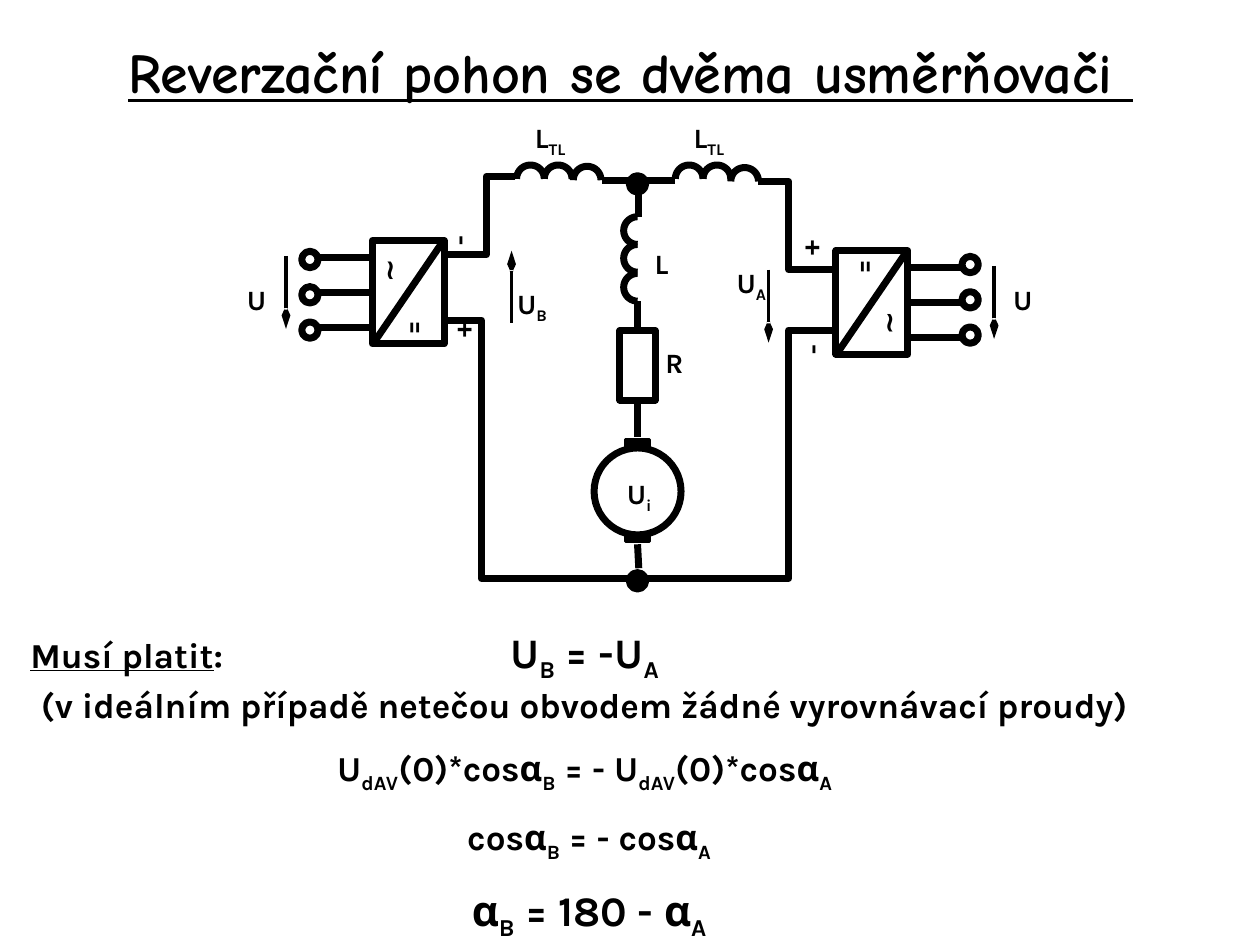
"""Build a slide on a reversing drive fed by two rectifiers."""
from dataclasses import dataclass
from math import cos, pi, sin

from lxml.etree import SubElement
from pptx import Presentation
from pptx.dml.color import RGBColor
from pptx.enum.shapes import MSO_CONNECTOR as Connector, MSO_SHAPE as Shape
from pptx.enum.text import MSO_ANCHOR as Anchor, MSO_AUTO_SIZE as AutoSize, PP_ALIGN as Align
from pptx.oxml.ns import qn
from pptx.util import Inches, Pt


@dataclass(frozen=True)
class Theme:
    ink: RGBColor = RGBColor(0, 0, 0)
    title_font: str = "Comic Neue"
    body_font: str = "Karla"
    title: int = 32
    large: int = 24
    body: int = 20
    label: int = 16
    wire: int = 4
    thin: int = 2
    inset: float = 0.04
    label_height: float = 0.35


THEME = Theme()


def write(para, text, size=THEME.body, font=THEME.body_font, underline=False):
    for index, part in enumerate(text.split("_")):
        if not part:
            continue
        span = para.add_run()
        span.text = part
        span.font.name, span.font.size = font, Pt(size)
        span.font.bold, span.font.underline = True, underline
        span.font.color.rgb = THEME.ink
        if index % 2:
            span._r.get_or_add_rPr().set("baseline", "-25000")


class Canvas:
    def __init__(self, page, theme):
        self.page, self.theme = page, theme

    def title(self, text, left, top, width, height):
        box = self.page.shapes.title
        box.left, box.top = Inches(left), Inches(top)
        box.width, box.height = Inches(width), Inches(height)
        box.text_frame.vertical_anchor = Anchor.MIDDLE
        para = box.text_frame.paragraphs[0]
        para.alignment = Align.CENTER
        write(para, text, size=self.theme.title, font=self.theme.title_font, underline=True)

    def text_box(self, left, top, width, height, wrap=False):
        box = self.page.shapes.add_textbox(*map(Inches, (left, top, width, height)))
        frame = box.text_frame
        frame.word_wrap, frame.auto_size = wrap, AutoSize.SHAPE_TO_FIT_TEXT
        frame.margin_left = frame.margin_right = Inches(self.theme.inset)
        frame.margin_top = frame.margin_bottom = Inches(self.theme.inset)
        return box

    def label(self, text, x, y, width=0.24, rotation=0, align=Align.LEFT):
        height = self.theme.label_height
        box = self.text_box(x - width / 2, y - height / 2, width, height)
        box.rotation = rotation
        para = box.text_frame.paragraphs[0]
        para.alignment = align
        write(para, text, size=self.theme.label)

    def outline(self, shape, weight, filled=False):
        shape.shadow.inherit = False
        shape.line.color.rgb, shape.line.width = self.theme.ink, Pt(weight)
        if filled:
            shape.fill.solid()
            shape.fill.fore_color.rgb = self.theme.ink
        else:
            shape.fill.background()

    def shape(self, kind, x, y, width, height, weight=THEME.wire, filled=False):
        shape = self.page.shapes.add_shape(
            kind, *map(Inches, (x - width / 2, y - height / 2, width, height)))
        self.outline(shape, weight, filled)

    def node(self, x, y, filled=False):
        self.shape(Shape.OVAL, x, y, 0.13, 0.13, filled=filled)

    def line(self, start, end, weight=THEME.wire, arrow=False):
        line = self.page.shapes.add_connector(
            Connector.STRAIGHT, *map(Inches, (*start, *end)))
        line.line.color.rgb, line.line.width = self.theme.ink, Pt(weight)
        properties = line._element.spPr
        if arrow:
            SubElement(properties.find(qn("a:ln")), qn("a:tailEnd"),
                       type="arrow", w="sm", len="lg")
        SubElement(properties, qn("a:effectLst"))

    def arrow(self, x, start, end):
        self.line((x, start), (x, end), self.theme.thin, arrow=True)

    def wire(self, points):
        spots = [(Inches(x), Inches(y)) for x, y in points]
        builder = self.page.shapes.build_freeform(*spots[0])
        builder.add_line_segments(spots[1:], close=False)
        self.outline(builder.convert_to_shape(), self.theme.wire)

    def turn(self, x, y, start_angle, radius=0.11, steps=24):
        angles = [start_angle + pi * step / steps for step in range(steps + 1)]
        self.wire([(x + radius * cos(a), y + radius * sin(a)) for a in angles])

    def converter(self, x, y, side):
        rotation = 90 if side > 0 else 270
        self.shape(Shape.RECTANGLE, x, y, 0.57, 0.82)
        self.line((x + 0.28, y - 0.41), (x - 0.28, y + 0.41))
        for offset in (-0.28, 0, 0.28):
            self.line((x + side * 0.28, y + offset), (x + side * 0.72, y + offset))
            self.node(x + side * 0.78, y + offset - side * 0.02)
        for sign, dx, dy in (("∼", 0.16, 0.16), ("=", -0.02, -0.28)):
            self.label(sign, x + side * dx, y + side * dy, 0.25, rotation, Align.CENTER)
        self.arrow(x + side * 0.97, y - 0.29, y + 0.29)
        self.label("U", x + side * 1.2, 2.38)

    def statement(self, rows, left, top, width, height, tab, gap):
        frame = self.text_box(left, top, width, height, wrap=True).text_frame
        for index, (spaced, spans) in enumerate(rows):
            para = frame.add_paragraph() if index else frame.paragraphs[0]
            if spaced:
                para.space_before = Pt(gap)
            stops = SubElement(para._p.get_or_add_pPr(), qn("a:tabLst"))
            SubElement(stops, qn("a:tab"), pos=str(Inches(tab)), algn="ctr")
            for text, style in spans:
                write(para, text, **style)


def draw_circuit(canvas):
    middle = 5.06
    canvas.converter(6.92, 2.4, 1)
    canvas.converter(3.24, 2.32, -1)

    for x, y in ((4.21, 1.42), (4.43, 1.42), (4.66, 1.43),
                 (5.47, 1.42), (5.69, 1.42), (5.91, 1.44)):
        canvas.turn(x, y, pi)
    for y in (1.83, 2.05, 2.28):
        canvas.turn(middle, y, pi / 2)

    for start, end in (((4.78, 1.43), (5, 1.43)), ((5.13, 1.43), (5.36, 1.43)),
                       ((5.07, 1.49), (5.07, 1.72)), ((middle, 2.39), (middle, 2.61)),
                       ((middle, 3.19), (middle, 3.47)), ((middle, 4.32), (5.07, 4.51))):
        canvas.line(start, end)
    for points in (((6.02, 1.44), (6.26, 1.44), (6.26, 2.14), (6.65, 2.14)),
                   ((6.65, 2.62), (6.26, 2.62), (6.26, 4.59), (5.08, 4.59)),
                   ((4.09, 1.4), (3.86, 1.4), (3.86, 2.02), (3.54, 2.02)),
                   ((3.51, 2.54), (3.82, 2.54), (3.82, 4.59), (5, 4.59))):
        canvas.wire(points)

    canvas.shape(Shape.RECTANGLE, middle, 2.9, 0.28, 0.55)
    canvas.shape(Shape.OVAL, middle, 3.9, 0.69, 0.69)
    for y in (3.52, 4.27):
        canvas.shape(Shape.RECTANGLE, middle, y, 0.19, 0.06, THEME.thin, filled=True)
    for y in (1.46, 4.61):
        canvas.node(middle, y, filled=True)

    canvas.arrow(4.06, 2.56, 1.99)
    canvas.arrow(6.1, 2.14, 2.72)
    for text, x, y, width in (("U_i_", 5.08, 3.92, 0.29), ("U_B_", 4.24, 2.41, 0.35),
                              ("U_A_", 5.98, 2.24, 0.35), ("L_TL_", 4.4, 1.09, 0.39),
                              ("L_TL_", 5.66, 1.09, 0.39), ("L", 5.26, 2.09, 0.21),
                              ("R", 5.36, 2.88, 0.24)):
        canvas.label(text, x, y, width)
    for text, x, y, width in (("+", 6.48, 2, 0.26), ("-", 6.48, 2.78, 0.18),
                              ("+", 3.72, 2.65, 0.26), ("-", 3.68, 1.92, 0.18)):
        canvas.label(text, x, y, width, rotation=90)


def main():
    deck = Presentation()
    deck.slide_width, deck.slide_height = Inches(10), Inches(7.5)
    canvas = Canvas(deck.slides.add_slide(deck.slide_layouts[5]), THEME)
    canvas.title("Reverzační pohon se dvěma usměrňovači ", 0.2, 0.21, 9.61, 0.71)
    large = {"size": THEME.large}
    rows = (
        (False, (("Musí platit", {"underline": True}), (":\t", {}), ("U_B_ = -U_A_", large))),
        (False, (("\t(v ideálním případě netečou obvodem žádné vyrovnávací proudy)", {}),)),
        (True, (("\tU_dAV_(0)*cosα_B_ = - U_dAV_(0)*cosα_A_", {}),)),
        (True, (("\t cosα_B_ = - cosα_A_", {}),)),
        (True, (("\t ", {}), ("α_B_ = 180 - α_A_", large))),
    )
    canvas.statement(rows, 0.2, 4.93, 9.69, 2.44, tab=4.4, gap=12)
    draw_circuit(canvas)
    deck.save("out.pptx")


if __name__ == "__main__":
    main()
